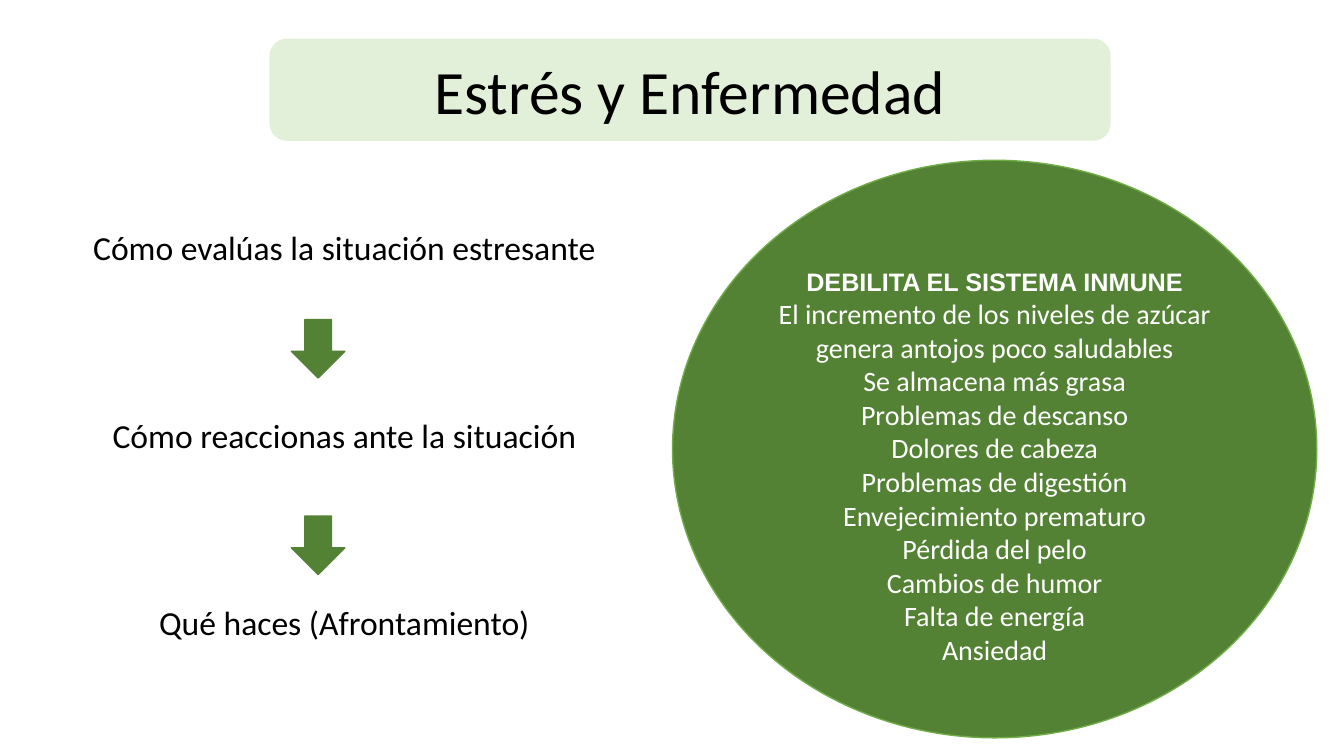
"""Build the slide on stress and illness."""
from pptx import Presentation
from pptx.dml.color import RGBColor
from pptx.enum.shapes import MSO_SHAPE
from pptx.enum.text import MSO_ANCHOR, PP_ALIGN
from pptx.util import Inches, Pt

ROUNDED = MSO_SHAPE.ROUNDED_RECTANGLE
OVAL = MSO_SHAPE.OVAL
DOWN_ARROW = MSO_SHAPE.DOWN_ARROW
MIDDLE = MSO_ANCHOR.MIDDLE
CENTER = PP_ALIGN.CENTER

BLACK, WHITE = "000000", "FFFFFF"
PALE_GREEN, DARK_GREEN, EDGE_GREEN = "E2F0D9", "548235", "70AD47"

STEPS = [
    "Cómo evalúas la situación estresante",
    "Cómo reaccionas ante la situación",
    "Qué haces (Afrontamiento)",
]
EFFECTS = [
    "El incremento de los niveles de azúcar genera antojos poco saludables",
    "Se almacena más grasa",
    "Problemas de descanso",
    "Dolores de cabeza",
    "Problemas de digestión",
    "Envejecimiento prematuro",
    "Pérdida del pelo",
    "Cambios de humor",
    "Falta de energía",
    "Ansiedad",
]


def color(value):
    return RGBColor.from_string(value)


def write(frame, lines, hue, formats, spacing=None):
    frame.word_wrap = True
    for index, line in enumerate(lines):
        para = frame.add_paragraph() if index else frame.paragraphs[0]
        para.alignment = CENTER
        for name, value in (spacing or {}).items():
            setattr(para, name, value)
        span = para.add_run()
        span.text = line
        span.font.color.rgb = color(hue)
        for name, value in formats[min(index, len(formats) - 1)].items():
            setattr(span.font, name, value)


deck = Presentation()
deck.slide_width, deck.slide_height = Inches(13.33), Inches(7.5)
page = deck.slides.add_slide(deck.slide_layouts[6])

steps_box = page.shapes.add_textbox(Inches(0.59), Inches(1.8), Inches(5.65), Inches(4.86))
write(steps_box.text_frame, STEPS, BLACK, [{"name": "Calibri", "size": Pt(24)}],
      {"line_spacing": 2.0, "space_after": Pt(76.5)})

shapes = {}
for label, kind, left, top, width, height, fill, edge in [
    ("title", ROUNDED, 2.68, 0.39, 8.33, 1, PALE_GREEN, PALE_GREEN),
    ("effects", OVAL, 6.67, 1.59, 6.39, 5.73, DARK_GREEN, EDGE_GREEN),
    ("first arrow", DOWN_ARROW, 2.89, 3.17, 0.53, 0.58, DARK_GREEN, DARK_GREEN),
    ("second arrow", DOWN_ARROW, 2.89, 5.12, 0.53, 0.58, DARK_GREEN, DARK_GREEN),
]:
    shape = page.shapes.add_shape(kind, Inches(left), Inches(top), Inches(width), Inches(height))
    shape.shadow.inherit = False
    shape.fill.solid()
    shape.fill.fore_color.rgb = color(fill)
    shape.line.color.rgb = color(edge)
    shape.line.width = Pt(1)
    shape.text_frame.vertical_anchor = MIDDLE
    shapes[label] = shape

write(shapes["title"].text_frame, ["Estrés y Enfermedad"], BLACK,
      [{"name": "Calibri", "size": Pt(44)}])

effects_frame = shapes["effects"].text_frame
effects_frame.margin_top, effects_frame.margin_bottom = Inches(0.34), Inches(0)
write(effects_frame, ["DEBILITA EL SISTEMA INMUNE", *EFFECTS], WHITE,
      [{"name": "Arial", "size": Pt(18), "bold": True},
       {"name": "Calibri", "size": Pt(20), "bold": False}])

deck.save("out.pptx")
